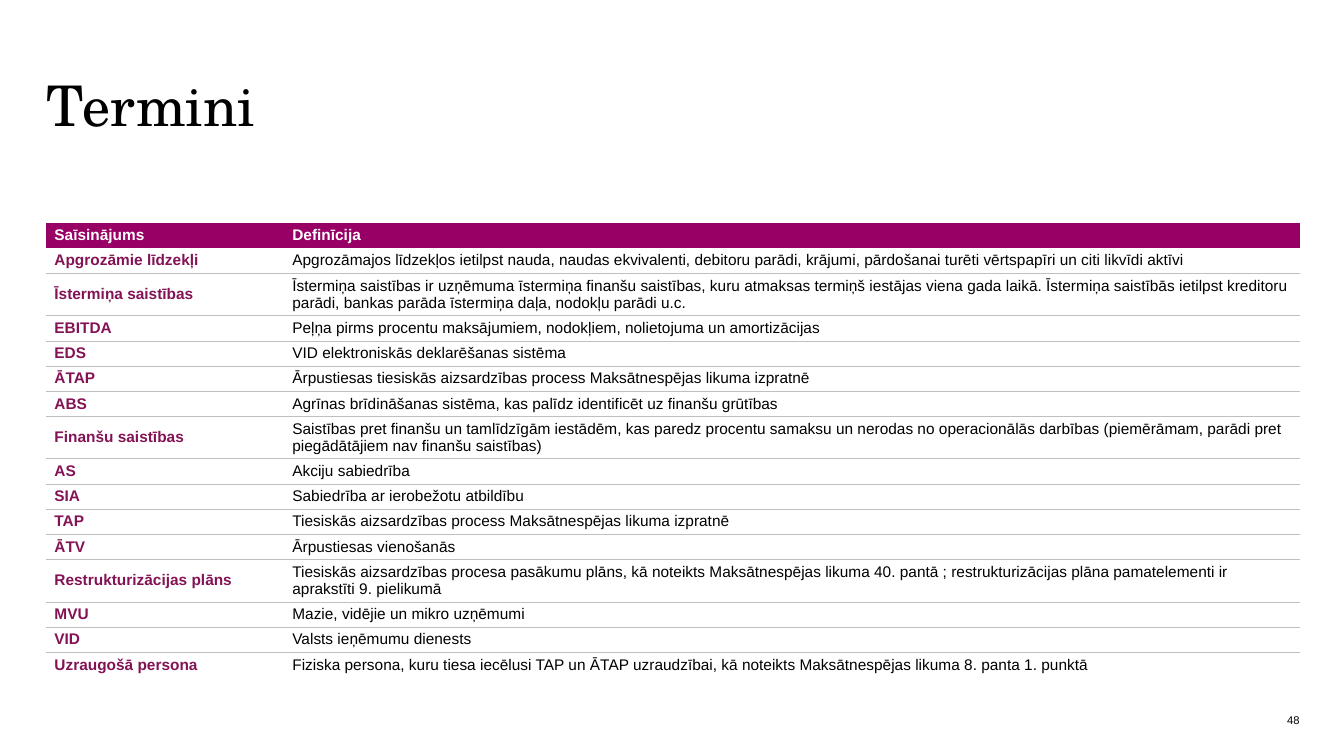
from lxml import etree
from pptx import Presentation
from pptx.dml.color import RGBColor
from pptx.enum import text
from pptx.oxml import ns
from pptx.util import Inches, Pt

# Content
TITLE = "Termini"
PAGE = "48"
HEADER = ("Saīsinājums", "Definīcija")
TERMS = [
    ("Apgrozāmie līdzekļi", "Apgrozāmajos līdzekļos ietilpst nauda, naudas ekvivalenti, debitoru parādi, krājumi, pārdošanai turēti vērtspapīri un citi likvīdi aktīvi"),
    ("Īstermiņa saistības", "Īstermiņa saistības ir uzņēmuma īstermiņa finanšu saistības, kuru atmaksas termiņš iestājas viena gada laikā. Īstermiņa saistībās ietilpst kreditoru parādi, bankas parāda īstermiņa daļa, nodokļu parādi u.c."),
    ("EBITDA", "Peļņa pirms procentu maksājumiem, nodokļiem, nolietojuma un amortizācijas"),
    ("EDS", "VID elektroniskās deklarēšanas sistēma"),
    ("ĀTAP", "Ārpustiesas tiesiskās aizsardzības process Maksātnespējas likuma izpratnē"),
    ("ABS", "Agrīnas brīdināšanas sistēma, kas palīdz identificēt uz finanšu grūtības"),
    ("Finanšu saistības", "Saistības pret finanšu un tamlīdzīgām iestādēm, kas paredz procentu samaksu un nerodas no operacionālās darbības (piemērāmam, parādi pret piegādātājiem nav finanšu saistības)"),
    ("AS", "Akciju sabiedrība"),
    ("SIA", "Sabiedrība ar ierobežotu atbildību"),
    ("TAP", "Tiesiskās aizsardzības process Maksātnespējas likuma izpratnē"),
    ("ĀTV", "Ārpustiesas vienošanās"),
    ("Restrukturizācijas plāns", "Tiesiskās aizsardzības procesa pasākumu plāns, kā noteikts Maksātnespējas likuma 40. pantā ; restrukturizācijas plāna pamatelementi ir aprakstīti 9. pielikumā"),
    ("MVU", "Mazie, vidējie un mikro uzņēmumi"),
    ("VID", "Valsts ieņēmumu dienests"),
    ("Uzraugošā persona", "Fiziska persona, kuru tiesa iecēlusi TAP un ĀTAP uzraudzībai, kā noteikts Maksātnespējas likuma 8. panta 1. punktā"),
]

# Look
BLACK = RGBColor(0x00, 0x00, 0x00)
WHITE = RGBColor(0xFF, 0xFF, 0xFF)
MAGENTA = RGBColor(0x99, 0x00, 0x66)
PLUM = RGBColor(0x83, 0x13, 0x55)
GREY = RGBColor(0xBF, 0xBF, 0xBF)
NO_STYLE = "{2D5ABB26-0587-4C30-8999-92F81FD0307C}"

LEFT, WIDTH = Inches(0.46), Inches(12.43)
COLUMNS = (Inches(2.36), Inches(10.07))
LINE_ROW, TWO_LINE_ROW = Inches(0.25), Inches(0.42)
LINE_CHARS = 145  # characters that fit on one definition line


def write(tf, content, size=11, font="Arial", color=BLACK, bold=False,
          align=text.PP_ALIGN.LEFT, spacing=1.0):
    tf.word_wrap = True
    p = tf.paragraphs[0]
    p.alignment = align
    p.line_spacing = spacing
    r = p.add_run()
    r.text = content
    r.font.size, r.font.name, r.font.bold = Pt(size), font, bold
    r.font.color.rgb = color


def no_margins(tf):
    tf.margin_left = tf.margin_right = tf.margin_top = tf.margin_bottom = 0
    tf.vertical_anchor = text.MSO_ANCHOR.MIDDLE


def rule(cell, sides):
    """Draw hairlines on the given sides, T before B."""
    tcPr = cell._tc.get_or_add_tcPr()
    for i, side in enumerate(sides):
        ln = etree.Element(ns.qn("a:ln" + side), w=str(Pt(0.25)))
        fill = etree.SubElement(ln, ns.qn("a:solidFill"))
        etree.SubElement(fill, ns.qn("a:srgbClr"), val=str(GREY))
        tcPr.insert(i, ln)


prs = Presentation()
prs.slide_width, prs.slide_height = Inches(13.33), Inches(7.5)
s = prs.slides.add_slide(prs.slide_layouts[5])

# Title
title = s.shapes.title
title.left, title.top, title.width, title.height = LEFT, Inches(0.36), WIDTH, Inches(1.44)
no_margins(title.text_frame)
write(title.text_frame, TITLE, size=40, font="TeX Gyre Schola", spacing=0.9)

# Table of terms
rows = [HEADER] + TERMS
heights = [TWO_LINE_ROW if len(d) > LINE_CHARS else LINE_ROW for _, d in rows]
frame = s.shapes.add_table(len(rows), 2, LEFT, Inches(2.21), WIDTH, sum(heights))
table = frame.table
table.first_row = True
table.horz_banding = False
table._tbl.tblPr.find(ns.qn("a:tableStyleId")).text = NO_STYLE
for column, width in zip(table.columns, COLUMNS):
    column.width = width

last = len(rows) - 1
for i, row in enumerate(rows):
    table.rows[i].height = heights[i]
    sides = ("T" if i > 1 else "") + ("B" if 0 < i < last else "")
    for j, content in enumerate(row):
        cell = table.cell(i, j)
        cell.margin_left = cell.margin_right = Inches(0.08)
        cell.margin_top = cell.margin_bottom = Pt(2.6)
        cell.vertical_anchor = text.MSO_ANCHOR.MIDDLE
        if i == 0:
            cell.fill.solid()
            cell.fill.fore_color.rgb = MAGENTA
            color = WHITE
        else:
            cell.fill.background()
            color = BLACK if j else PLUM
        rule(cell, sides)
        write(cell.text_frame, content, color=color, bold=i == 0 or j == 0)

# Page number
number = s.shapes.add_textbox(Inches(9.89), Inches(7.08), Inches(3), Inches(0.13))
no_margins(number.text_frame)
write(number.text_frame, PAGE, size=8, align=text.PP_ALIGN.RIGHT)

prs.save("out.pptx")
